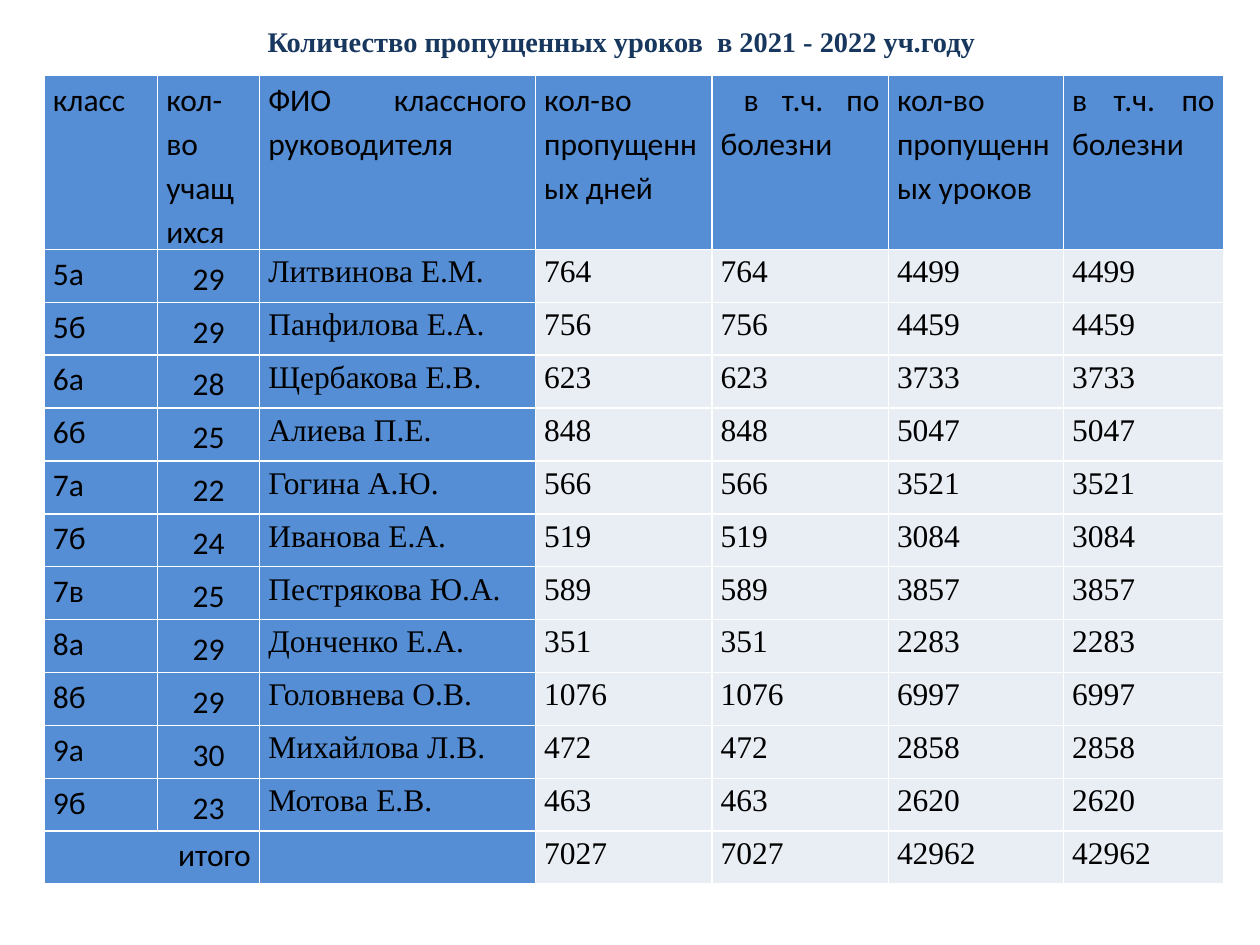
"""Build a slide with a table of missed lessons by class."""
import pptx
import pptx.util
import pptx.dml.color
import pptx.enum.text
import pptx.oxml.ns
from lxml import etree

Inches, Pt = pptx.util.Inches, pptx.util.Pt
RGBColor = pptx.dml.color.RGBColor
Align = pptx.enum.text.PP_ALIGN
Anchor = pptx.enum.text.MSO_ANCHOR
qn = pptx.oxml.ns.qn

NAVY = RGBColor(0x17, 0x37, 0x5E)
BLUE = RGBColor(0x55, 0x8E, 0xD5)
PALE = RGBColor(0xE9, 0xED, 0xF4)
BLACK = RGBColor(0, 0, 0)
WHITE = RGBColor(255, 255, 255)
SANS, SERIF = "Calibri", "Times New Roman"

TITLE = "Количество пропущенных уроков  в 2021 - 2022 уч.году"
HEAD = ["класс", "кол-во учащихся", "ФИО классного руководителя",
        "кол-во пропущенных дней", " в т.ч. по болезни",
        "кол-во пропущенных уроков", "в т.ч. по болезни"]
DATA = [
    ("5а", 29, "Литвинова Е.М.", 764, 764, 4499, 4499),
    ("5б", 29, "Панфилова Е.А.", 756, 756, 4459, 4459),
    ("6а", 28, "Щербакова Е.В.", 623, 623, 3733, 3733),
    ("6б", 25, "Алиева П.Е.", 848, 848, 5047, 5047),
    ("7а", 22, "Гогина А.Ю.", 566, 566, 3521, 3521),
    ("7б", 24, "Иванова Е.А.", 519, 519, 3084, 3084),
    ("7в", 25, "Пестрякова Ю.А.", 589, 589, 3857, 3857),
    ("8а", 29, "Донченко Е.А.", 351, 351, 2283, 2283),
    ("8б", 29, "Головнева О.В.", 1076, 1076, 6997, 6997),
    ("9а", 30, "Михайлова Л.В.", 472, 472, 2858, 2858),
    ("9б", 23, "Мотова Е.В.", 463, 463, 2620, 2620),
]
TOTAL = ("итого", "", "", 7027, 7027, 42962, 42962)
WIDTHS = [0.9, 0.81, 2.19, 1.4, 1.4, 1.39, 1.27]
HEAD_H, ROW_H = 1.02, 0.42


def write(para, text, font, size, color, bold=False):
    run = para.add_run()
    run.text = text
    run.font.name, run.font.size, run.font.bold = font, Pt(size), bold
    run.font.color.rgb = color


def inset(box, left, top, right, bottom):
    box.margin_left, box.margin_top = Inches(left), Inches(top)
    box.margin_right, box.margin_bottom = Inches(right), Inches(bottom)


def border(cell):
    props = cell._tc.get_or_add_tcPr()
    for at, side in enumerate(("a:lnL", "a:lnR", "a:lnT", "a:lnB")):
        line = etree.Element(qn(side), w=str(Pt(1)))
        fill = etree.SubElement(line, qn("a:solidFill"))
        etree.SubElement(fill, qn("a:srgbClr"), val=str(WHITE))
        props.insert(at, line)


def fill_cell(cell, text, font, align, color, mid):
    cell.fill.solid()
    cell.fill.fore_color.rgb = color
    border(cell)
    if mid:
        cell.vertical_anchor = Anchor.MIDDLE
        inset(cell, 0.01, 0.01, 0.01, 0)
    else:
        inset(cell, 0.07, 0, 0.07, 0)
    para = cell.text_frame.paragraphs[0]
    para.alignment, para.line_spacing = align, 1.15
    if text:
        write(para, text, font, 18, BLACK)


def add_title(slide):
    box = slide.shapes.add_textbox(
        Inches(0.43), Inches(0.21), Inches(9), Inches(0.24))
    frame = box.text_frame
    frame.word_wrap = True
    frame.vertical_anchor = Anchor.MIDDLE
    inset(frame, 0.1, 0, 0.1, 0)
    para = frame.paragraphs[0]
    para.alignment = Align.CENTER
    write(para, TITLE, SERIF, 16.2, NAVY, True)


def add_grid(slide):
    rows = [HEAD, *DATA, TOTAL]
    last = len(rows) - 1
    grid = slide.shapes.add_table(
        len(rows), len(WIDTHS), Inches(0.35), Inches(0.6),
        Inches(sum(WIDTHS)), Inches(HEAD_H + ROW_H * last)).table
    grid.first_row = grid.horz_banding = False
    for col, width in zip(grid.columns, WIDTHS):
        col.width = Inches(width)
    for r, row in enumerate(rows):
        grid.rows[r].height = Inches(ROW_H if r else HEAD_H)
        for c, value in enumerate(row):
            mid = c == 1 and 0 < r < last
            align = Align.CENTER if mid else Align.JUSTIFY
            if r == last and c == 0:
                align = Align.RIGHT
            font = SERIF if r and c > 1 else SANS
            color = PALE if r and c > 2 else BLUE
            fill_cell(grid.cell(r, c), str(value), font, align, color, mid)
    grid.cell(last, 0).merge(grid.cell(last, 1))


def main():
    deck = pptx.Presentation()
    deck.slide_width, deck.slide_height = Inches(10), Inches(7.5)
    slide = deck.slides.add_slide(deck.slide_layouts[6])
    add_title(slide)
    add_grid(slide)
    deck.save("out.pptx")


if __name__ == "__main__":
    main()
